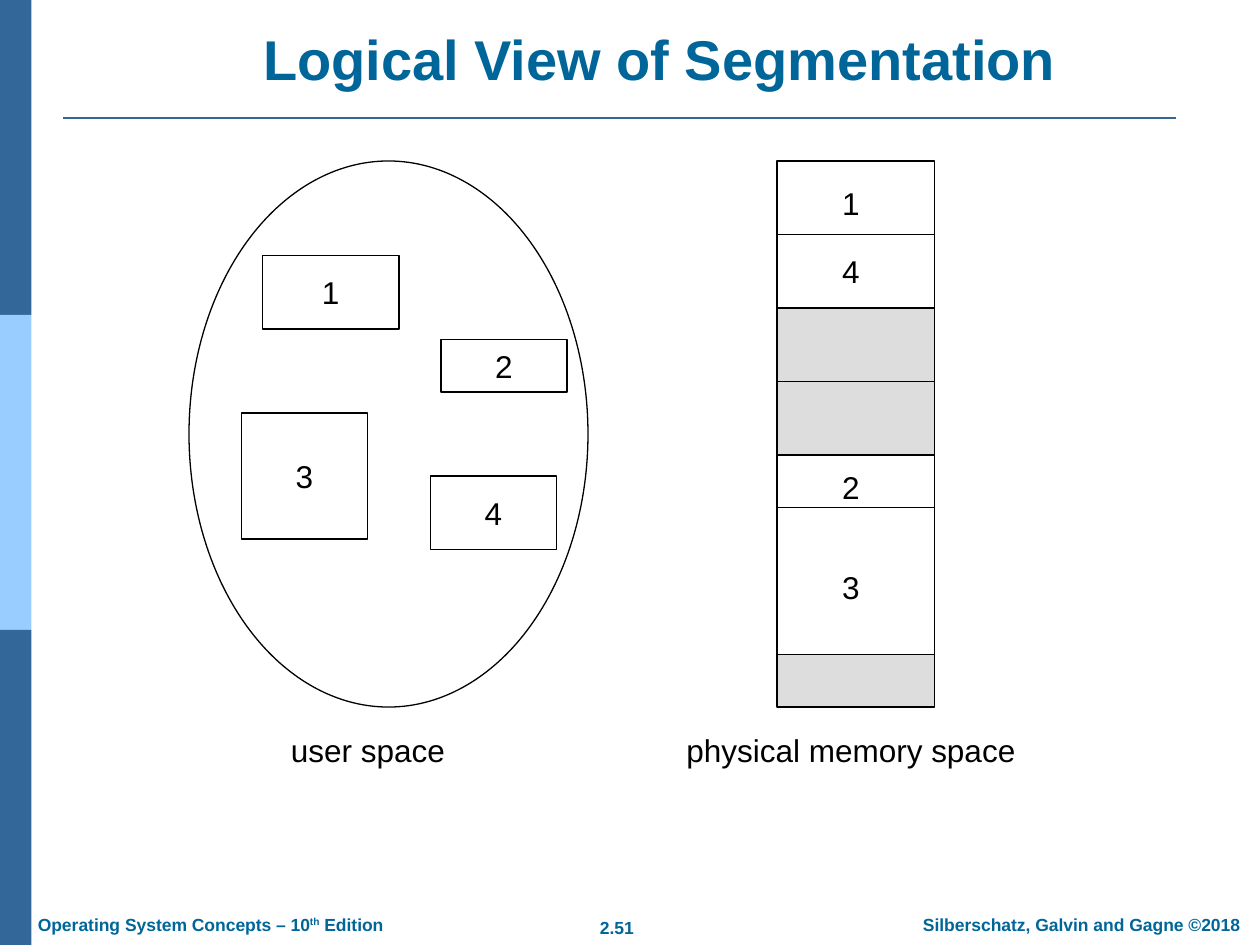
import dataclasses

import pptx
import pptx.dml.color
import pptx.enum.shapes
import pptx.enum.text
import pptx.oxml.ns
import pptx.util
from lxml import etree

Pt = pptx.util.Pt
Shapes = pptx.enum.shapes.MSO_SHAPE
Align = pptx.enum.text.PP_ALIGN
Anchor = pptx.enum.text.MSO_ANCHOR

FONT = "Arial"
BLACK, WHITE, GRAY = "000000", "FFFFFF", "DDDDDD"
TEAL, BLUE, LIGHT_BLUE = "006699", "336699", "99CCFF"


@dataclasses.dataclass
class Box:
    left: float
    top: float
    width: float
    height: float
    fill: str = WHITE
    label: str = ""


@dataclasses.dataclass
class Label:
    text: str
    left: float
    top: float
    width: float
    height: float = 29


@dataclasses.dataclass
class Run:
    text: str
    baseline: int = 0


SIDE_BARS = [Box(0, index * 180, 18, 180, fill)
             for index, fill in enumerate([BLUE, LIGHT_BLUE, BLUE])]
SEGMENTS = [
    Box(150, 146, 78, 42, label="1"),
    Box(138, 236, 72, 72, label="3"),
    Box(252, 194, 72, 30, label="2"),
    Box(246, 272, 72, 42, label="4"),
]
MEMORY_LEFT, MEMORY_TOP, MEMORY_WIDTH = 444, 92, 90
MEMORY_BLOCKS = [(84, WHITE), (84, GRAY), (114, WHITE), (30, GRAY)]
MEMORY_DIVIDERS = [134, 218, 290]
MEMORY_LABELS = [Label(text, 474, top, 24.5) for text, top in
                 [("1", 101.5), ("4", 140.5), ("2", 263.5), ("3", 321)]]
CAPTIONS = [
    Label("user space ", 158.5, 414, 108.5),
    Label("physical memory space", 384, 414, 204.5),
]


def color(value: str) -> pptx.dml.color.RGBColor:
    return pptx.dml.color.RGBColor.from_string(value)


def add_run(paragraph, run: Run, size: float, ink: str, bold: bool = False) -> None:
    text_run = paragraph.add_run()
    text_run.text = run.text
    font = text_run.font
    font.name, font.size, font.bold = FONT, Pt(size), bold
    font.color.rgb = color(ink)
    if run.baseline:
        text_run._r.get_or_add_rPr().set("baseline", str(run.baseline * 1000))


def add_box(shapes, box: Box, kind=Shapes.RECTANGLE, outlined: bool = True) -> None:
    shape = shapes.add_shape(kind, Pt(box.left), Pt(box.top), Pt(box.width), Pt(box.height))
    shape.shadow.inherit = False
    shape.fill.solid()
    shape.fill.fore_color.rgb = color(box.fill)
    if outlined:
        shape.line.color.rgb = color(BLACK)
        shape.line.width = Pt(0.75)
    else:
        shape.line.fill.background()
    if box.label:
        frame = shape.text_frame
        frame.word_wrap = False
        frame.vertical_anchor = Anchor.MIDDLE
        frame.paragraphs[0].alignment = Align.CENTER
        add_run(frame.paragraphs[0], Run(box.label), 18, BLACK)


def add_rule(shapes, left: float, right: float, top: float, ink: str, weight: float) -> None:
    line = shapes.add_connector(pptx.enum.shapes.MSO_CONNECTOR.STRAIGHT,
                                Pt(left), Pt(top), Pt(right), Pt(top))
    line.line.color.rgb = color(ink)
    line.line.width = Pt(weight)
    etree.SubElement(line._element.spPr, pptx.oxml.ns.qn("a:effectLst"))


def add_text(shapes, label: Label, runs: list[Run], size: float = 18, ink: str = BLACK,
             bold: bool = False, align=Align.CENTER, anchor=Anchor.MIDDLE,
             wrap: bool = False) -> None:
    text_box = shapes.add_textbox(Pt(label.left), Pt(label.top), Pt(label.width), Pt(label.height))
    frame = text_box.text_frame
    frame.word_wrap = wrap
    frame.auto_size = pptx.enum.text.MSO_AUTO_SIZE.SHAPE_TO_FIT_TEXT
    frame.vertical_anchor = anchor
    paragraph = frame.paragraphs[0]
    paragraph.alignment = align
    for run in runs:
        add_run(paragraph, run, size, ink, bold)


def add_footer(shapes, label: Label, runs: list[Run], align=Align.CENTER,
               wrap: bool = False) -> None:
    add_text(shapes, label, runs, 10, TEAL, True, align, Anchor.TOP, wrap)


def add_title(slide, text: str) -> None:
    title = slide.shapes.title
    title.left, title.top, title.width, title.height = Pt(70), Pt(11), Pt(614), Pt(45)
    frame = title.text_frame
    frame.vertical_anchor = Anchor.BOTTOM
    frame.paragraphs[0].alignment = Align.CENTER
    add_run(frame.paragraphs[0], Run(text), 32, TEAL, True)


def add_memory(slide) -> None:
    shapes = slide.shapes.add_group_shape().shapes
    top = MEMORY_TOP
    for height, fill in MEMORY_BLOCKS:
        add_box(shapes, Box(MEMORY_LEFT, top, MEMORY_WIDTH, height, fill))
        top += height
    for divider in MEMORY_DIVIDERS:
        add_rule(shapes, MEMORY_LEFT, MEMORY_LEFT + MEMORY_WIDTH, divider, BLACK, 0.75)
    for label in MEMORY_LABELS:
        add_text(shapes, label, [Run(label.text)])


def main() -> None:
    presentation = pptx.Presentation()
    presentation.slide_width, presentation.slide_height = Pt(720), Pt(540)
    slide = presentation.slides.add_slide(presentation.slide_layouts[5])
    shapes = slide.shapes

    # Frame: side bars, title and rule
    for bar in SIDE_BARS:
        add_box(shapes, bar, outlined=False)
    add_title(slide, "Logical View of Segmentation")
    add_rule(shapes, 36, 672, 67.5, BLUE, 1.5)

    # Footer
    page = Label("2.51", 335, 520.5, 35, 19.5)
    add_footer(shapes, page, [Run(page.text)])
    credit = Label("Silberschatz, Galvin and Gagne ©2018", 511, 518.5, 214, 19.5)
    add_footer(shapes, credit, [Run(credit.text)], wrap=True)
    add_footer(shapes, Label("", 14.5, 518.5, 215, 19.5),
               [Run("Operating System Concepts – 10"), Run("th", 30), Run(" Edition")],
               Align.LEFT)

    # User space
    add_box(shapes, Box(108, 92, 228, 312), Shapes.OVAL)
    for segment in SEGMENTS:
        add_box(shapes, segment)

    # Physical memory and captions
    add_memory(slide)
    for caption in CAPTIONS:
        add_text(shapes, caption, [Run(caption.text)])

    presentation.save("out.pptx")


if __name__ == "__main__":
    main()
